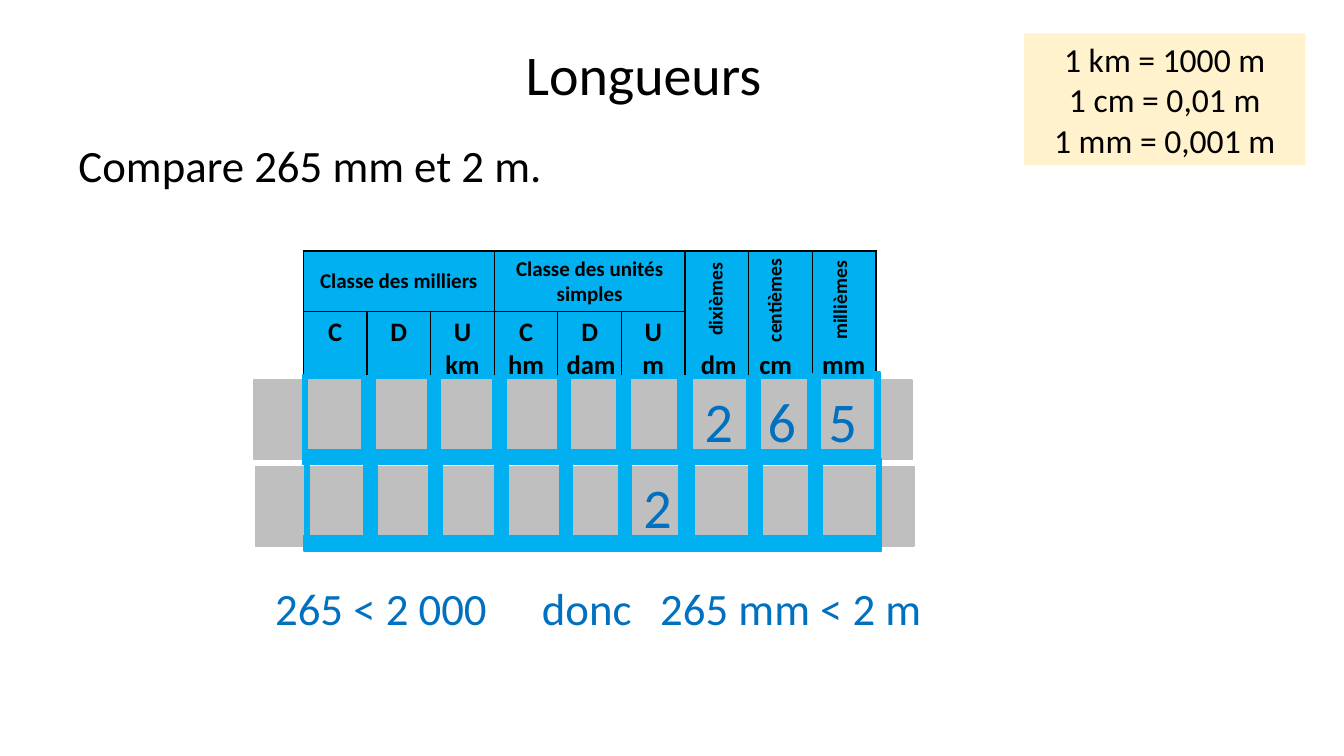
import pptx
import pptx.dml.color
import pptx.enum.shapes
import pptx.enum.text
import pptx.oxml.ns
import pptx.util
from lxml import etree

Pt = pptx.util.Pt
ALIGN = pptx.enum.text.PP_ALIGN
ANCHOR = pptx.enum.text.MSO_ANCHOR
RECT = pptx.enum.shapes.MSO_SHAPE.RECTANGLE

BLACK, WHITE, CYAN, GREY, BLUE, CREAM = (
    "000000", "FFFFFF", "00B0F0", "BFBFBF", "0070C0", "FFF2CC")

TITLE = "Longueurs"
QUESTION = "Compare 265 mm et 2 m."
EQUALITIES = ["1 km = 1000 m", "1 cm = 0,01 m", "1 mm = 0,001 m"]
COMPARISON = "265 < 2 000"
CONCLUSION = "donc\t265 mm < 2 m"

CLASSES = [(0, "Classe des milliers"), (3, "Classe des unités simples")]
RANKS = [["C"], ["D"], ["U", "km"], ["C", "hm"], ["D"], ["U", "m"]]
# text, left, top, width, height
DECIMAL_RANKS = [("dixièmes", 473, 201.6, 75.6, 24.5),
                 ("centièmes", 511.2, 202.3, 83.5, 24.5),
                 ("millièmes", 558, 202.3, 83.5, 24.5)]
UNITS = [("dm", 493.2, 244.8, 40.3, 30.2), ("cm", 535, 244.8, 38.2, 30.2),
         ("mm", 579.6, 244.8, 46, 30.2), ("dam", 397.4, 244.8, 49.7, 30.2)]

# digits of each measure with their centres, measured from the strip's text edge
MEASURES = [[("2", 325), ("6", 370), ("5", 413.5)], [("2", 280)]]
STRIP = (181.4, 271.4, 470.2, 56.9)
ROW_SHIFT = (1.3, 61.6)
# left, top, width, height
FRAME = [(left, 268.6, 9.4, 63.4) for left in (440.6, 398.2, 352.1, 305.3, 258.5)]
FRAME += [(216, 267.8, 3.6, 63.4), (216, 321.1, 412.6, 10.8),
          (625, 265.7, 3.6, 63.4), (483.8, 268.6, 7.2, 63.4),
          (533.5, 268.6, 9.4, 58.3), (491, 268.6, 3.6, 60.5),
          (576.7, 267.1, 9.4, 58.3)]


def color(hex_code):
    return pptx.dml.color.RGBColor.from_string(hex_code)


def write(frame, lines, size, ink=BLACK, bold=False, align=ALIGN.CENTER,
          anchor=ANCHOR.TOP):
    """Fill a text frame; each line is a list of runs."""
    frame.word_wrap = True
    frame.vertical_anchor = anchor
    for number, runs in enumerate(lines):
        paragraph = frame.add_paragraph() if number else frame.paragraphs[0]
        paragraph.alignment = align
        for text in runs:
            run = paragraph.add_run()
            run.text = text
            run.font.name = "Calibri"
            run.font.size = Pt(size)
            run.font.bold = bold
            run.font.color.rgb = color(ink)


def set_tabs(paragraph, stops, kind):
    tabs = etree.SubElement(paragraph._p.get_or_add_pPr(), pptx.oxml.ns.qn("a:tabLst"))
    for stop in stops:
        etree.SubElement(tabs, pptx.oxml.ns.qn("a:tab"), pos=str(int(Pt(stop))), algn=kind)


def add_label(box, text, size, **style):
    label = slide.shapes.add_textbox(*map(Pt, box))
    write(label.text_frame, [[text]], size, **style)
    return label


def add_block(shapes, box, fill, outlined=True):
    block = shapes.add_shape(RECT, *map(Pt, box))
    block.shadow.inherit = False
    block.fill.solid()
    block.fill.fore_color.rgb = color(fill)
    if outlined:
        block.line.color.rgb = color(fill)
        block.line.width = Pt(1)
    else:
        block.line.fill.background()
    return block


def style_cell(cell):
    """Black 1 pt borders and a cyan fill."""
    properties = cell._tc.get_or_add_tcPr()
    for side in ("a:lnL", "a:lnR", "a:lnT", "a:lnB"):
        border = etree.SubElement(properties, pptx.oxml.ns.qn(side), w=str(int(Pt(1))))
        paint = etree.SubElement(border, pptx.oxml.ns.qn("a:solidFill"))
        etree.SubElement(paint, pptx.oxml.ns.qn("a:srgbClr"), val=BLACK)
    cell.fill.solid()
    cell.fill.fore_color.rgb = color(CYAN)


def add_place_value_table():
    table = slide.shapes.add_table(2, 9, Pt(216.7), Pt(179.3), Pt(409), Pt(95.8)).table
    for column in table.columns:
        column.width = Pt(45.44)
    table.rows[0].height, table.rows[1].height = Pt(42.5), Pt(53.3)
    for cell in table.iter_cells():
        style_cell(cell)
    for column, name in CLASSES:
        head = table.cell(0, column)
        head.merge(table.cell(0, column + 2))
        write(head.text_frame, [[name]], 15, bold=True)
        head.vertical_anchor = ANCHOR.MIDDLE
    for column, lines in enumerate(RANKS):
        write(table.cell(1, column).text_frame, [[line] for line in lines], 19, bold=True)
    for column in range(len(RANKS), 9):
        table.cell(0, column).merge(table.cell(1, column))


def add_measure(row, digits):
    def shifted(box):
        left, top, width, height = box
        return left + row * ROW_SHIFT[0], top + row * ROW_SHIFT[1], width, height

    strip = add_block(slide.shapes, shifted(STRIP), GREY)
    write(strip.text_frame, [["\t" + digit for digit, _ in digits]], 40, BLUE,
          align=ALIGN.LEFT, anchor=ANCHOR.MIDDLE)
    set_tabs(strip.text_frame.paragraphs[0], [centre for _, centre in digits], "ctr")
    frame = slide.shapes.add_group_shape()
    for bar in FRAME:
        add_block(frame.shapes, shifted(bar), CYAN)


deck = pptx.Presentation()
deck.slide_width, deck.slide_height = Pt(960), Pt(540)
slide = deck.slides.add_slide(deck.slide_layouts[6])

title = add_label((144, 23.8, 631.4, 63.4), TITLE, 40, anchor=ANCHOR.MIDDLE)
title.text_frame.paragraphs[0].line_spacing = 0.9

question = add_block(slide.shapes, (49, 95, 364.3, 46), WHITE, outlined=False)
write(question.text_frame, [[QUESTION]], 32, align=ALIGN.LEFT)
question.text_frame.paragraphs[0].space_after = Pt(6)

reminder = add_block(slide.shapes, (731.5, 23.8, 200.9, 94.3), CREAM, outlined=False)
write(reminder.text_frame, [[line] for line in EQUALITIES], 24, anchor=ANCHOR.MIDDLE)

add_place_value_table()
for text, *box in DECIMAL_RANKS:
    add_label(box, text, 14, bold=True).rotation = 270
for text, *box in UNITS:
    add_label(box, text, 19, bold=True).text_frame.word_wrap = False

for row, digits in enumerate(MEASURES):
    add_measure(row, digits)

add_label((189.4, 411.1, 178.6, 46), COMPARISON, 32, ink=BLUE, align=ALIGN.LEFT)
conclusion = add_label((380, 411.1, 348, 46), CONCLUSION, 32, ink=BLUE, align=ALIGN.LEFT)
set_tabs(conclusion.text_frame.paragraphs[0], [84.5], "l")

deck.save("out.pptx")
